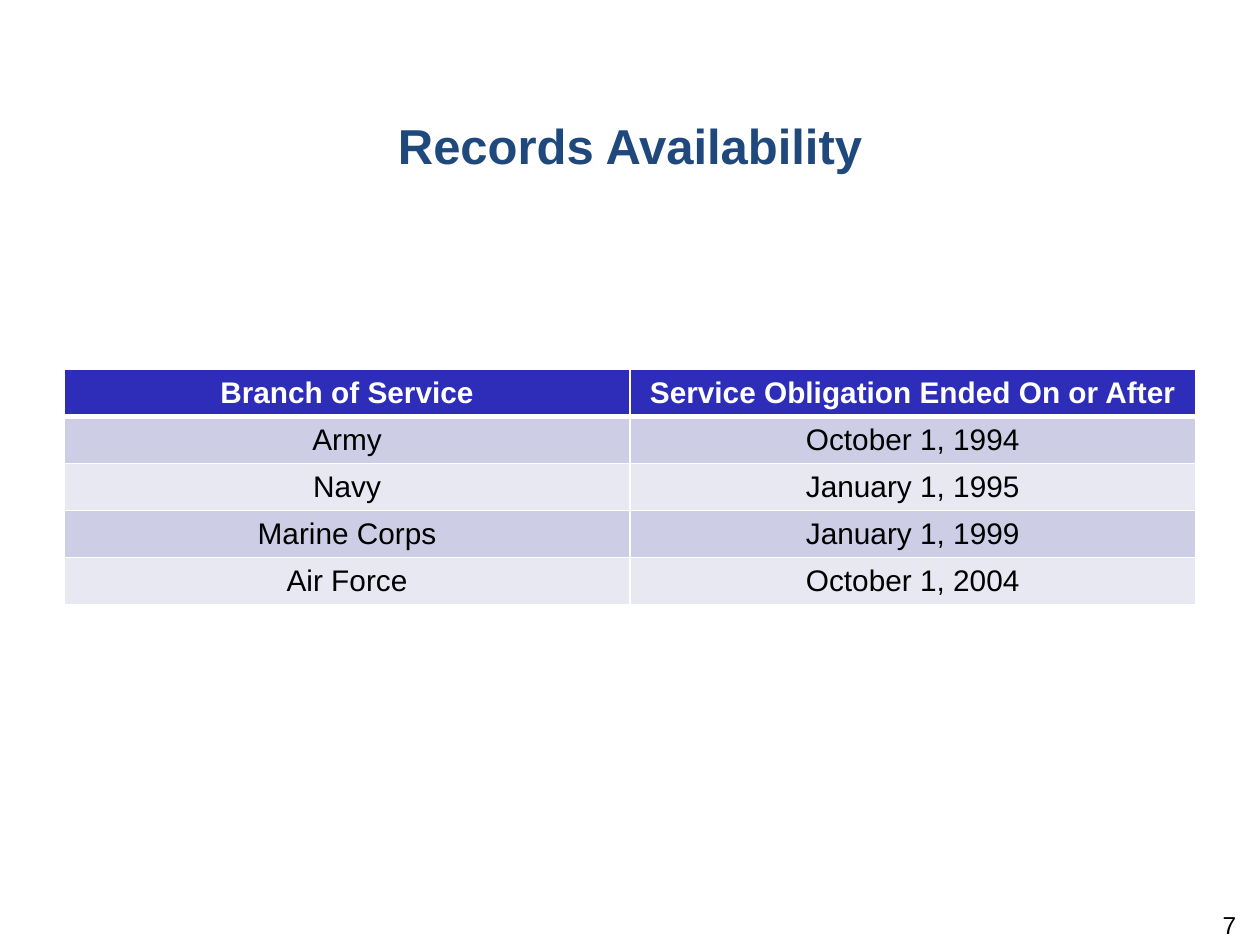
from pptx import Presentation
from pptx.dml.color import RGBColor
from pptx.enum.text import MSO_ANCHOR as ANCHOR, PP_ALIGN as ALIGN
from pptx.oxml import parse_xml
from pptx.oxml.ns import nsdecls
from pptx.util import Inches, Pt

NAVY = RGBColor(0x1F, 0x49, 0x7D)
BLUE = RGBColor(0x2D, 0x2D, 0xB9)
LILAC = RGBColor(0xCD, 0xCD, 0xE6)
PALE = RGBColor(0xE8, 0xE8, 0xF3)
WHITE = RGBColor(0xFF, 0xFF, 0xFF)
BLACK = RGBColor(0, 0, 0)

RECORDS = [
    ("Branch of Service", "Service Obligation Ended On or After"),
    ("Army", "October 1, 1994"),
    ("Navy", "January 1, 1995"),
    ("Marine Corps", "January 1, 1999"),
    ("Air Force", "October 1, 2004"),
]


class Deck:
    """Holds the text style and the current slide."""

    font = "Arial"

    def __init__(self, prs):
        self.s = prs.slides.add_slide(prs.slide_layouts[5])

    def set_text(self, tf, text, size, color, bold=False, align=ALIGN.CENTER):
        p = tf.paragraphs[0]
        p.text, p.alignment = text, align
        f = p.font
        f.name, f.size, f.bold = self.font, Pt(size), bold
        f.color.rgb = color
        return p

    def title(self, text, x, y, w, h):
        sp = self.s.shapes.title
        sp.left, sp.top, sp.width, sp.height = map(Inches, (x, y, w, h))
        sp.text_frame.vertical_anchor = ANCHOR.TOP
        self.set_text(sp.text_frame, text, 28, NAVY, True)

    def page_number(self, text, x, y, w, h):
        tf = self.s.shapes.add_textbox(*map(Inches, (x, y, w, h))).text_frame
        tf.word_wrap = True
        tf.margin_top = 0
        p = self.set_text(tf, text, 14, BLACK, align=ALIGN.RIGHT)
        p.space_after = Pt(6)

    def border(self, cell, side, width):
        ln = parse_xml(
            f'<a:{side} {nsdecls("a")} w="{Pt(width)}"><a:solidFill>'
            f'<a:srgbClr val="{WHITE}"/></a:solidFill></a:{side}>')
        tc_pr = cell._tc.get_or_add_tcPr()
        tc_pr.insert(len(tc_pr.findall("{*}ln*")), ln)

    def table(self, rows, x, y, w, row_h):
        size = map(Inches, (x, y, w, row_h * len(rows)))
        table = self.s.shapes.add_table(len(rows), len(rows[0]), *size).table
        for i, row in enumerate(rows):
            head = i == 0
            fill = BLUE if head else LILAC if i % 2 else PALE
            widths = {"lnL": 1, "lnR": 1, "lnT": 3 if i == 1 else 1, "lnB": 3 if head else 1}
            for j, text in enumerate(row):
                cell = table.cell(i, j)
                cell.vertical_anchor = ANCHOR.MIDDLE
                cell.margin_left = cell.margin_right = Inches(0.09)
                cell.margin_top = cell.margin_bottom = Inches(0.04)
                self.set_text(cell.text_frame, text, 17, WHITE if head else BLACK, head)
                for side, width in widths.items():
                    self.border(cell, side, width)
                cell.fill.solid()
                cell.fill.fore_color.rgb = fill


def main():
    prs = Presentation()
    prs.slide_width, prs.slide_height = Inches(10), Inches(7.5)
    deck = Deck(prs)
    deck.title("Records Availability", 0, 0.87, 10, 1.19)
    deck.page_number("7", 7.58, 7.22, 2.33, 0.4)
    deck.table(RECORDS, 0.51, 2.93, 8.98, 1.87 / len(RECORDS))
    prs.save("out.pptx")


if __name__ == "__main__":
    main()
